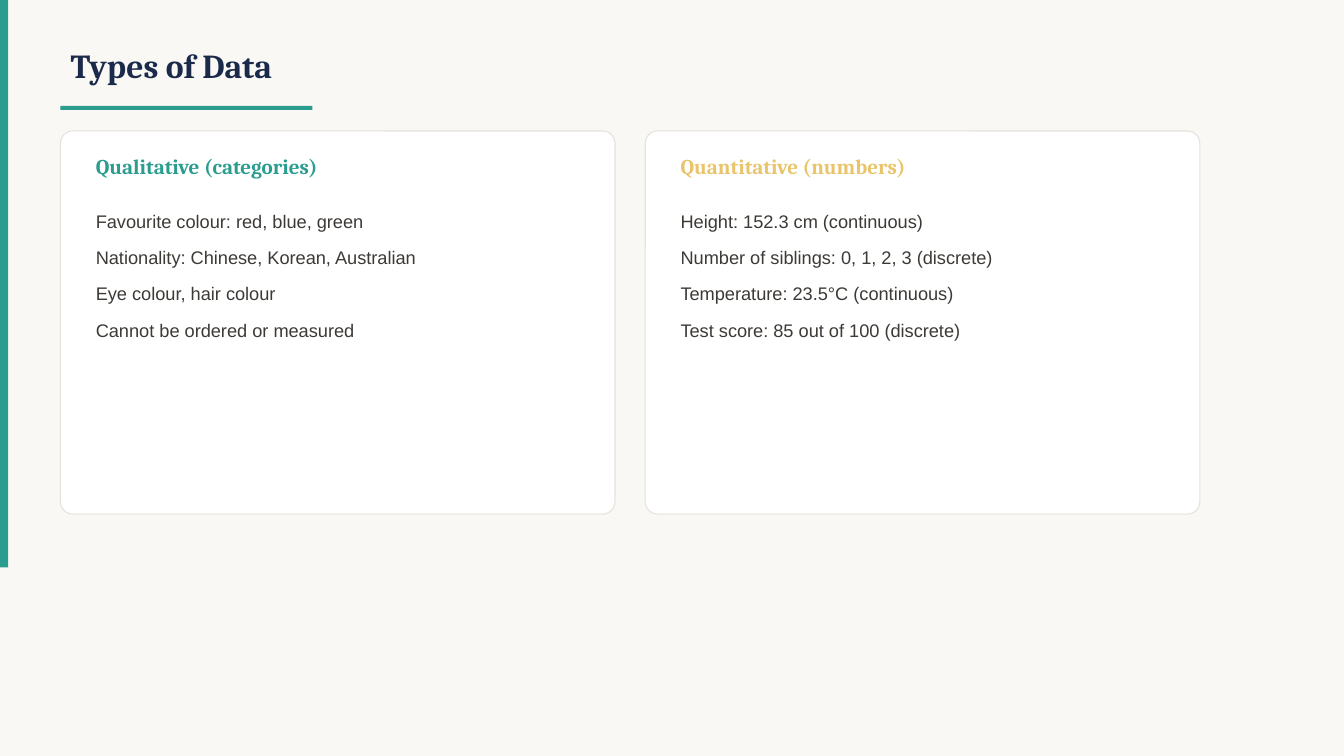
from lxml.etree import SubElement
from pptx import Presentation
from pptx.dml.color import RGBColor
from pptx.enum.shapes import MSO_SHAPE
from pptx.enum.text import MSO_ANCHOR, MSO_AUTO_SIZE, PP_ALIGN
from pptx.oxml.ns import qn
from pptx.util import Inches, Pt

COLORS = {
    "background": "FAF8F5",
    "teal": "2A9D8F",
    "navy": "1B2A4A",
    "gold": "E9C46A",
    "white": "FFFFFF",
    "border": "E5E2DC",
    "text": "3D3A36",
}

CARD_LEFT, CARD_TOP = 0.6, 1.3
CARD_WIDTH, CARD_HEIGHT = 5.5, 3.8
CARD_GAP, CARD_PADDING = 0.3, 0.25

CARDS = [
    ("Qualitative (categories)", "teal", [
        "Favourite colour: red, blue, green",
        "Nationality: Chinese, Korean, Australian",
        "Eye colour, hair colour",
        "Cannot be ordered or measured",
    ]),
    ("Quantitative (numbers)", "gold", [
        "Height: 152.3 cm (continuous)",
        "Number of siblings: 0, 1, 2, 3 (discrete)",
        "Temperature: 23.5°C (continuous)",
        "Test score: 85 out of 100 (discrete)",
    ]),
]


def color(name):
    return RGBColor.from_string(COLORS[name])


def add_block(slide, kind, box, fill, line=None):
    shape = slide.shapes.add_shape(kind, *map(Inches, box))
    shape.shadow.inherit = False
    shape.fill.solid()
    shape.fill.fore_color.rgb = color(fill)
    if line:
        shape.line.color.rgb = color(line)
        shape.line.width = Pt(0.75)
    else:
        shape.line.fill.background()
    return shape


def place(slide, placeholder, box, anchor):
    placeholder.left, placeholder.top, placeholder.width, placeholder.height = map(Inches, box)
    slide.shapes.element.append(placeholder.element)
    frame = placeholder.text_frame
    frame.word_wrap = True
    frame.auto_size = MSO_AUTO_SIZE.NONE
    frame.vertical_anchor = anchor
    return frame


def write_paragraph(paragraph, text, font_name, size, color_name, bold=False):
    properties = paragraph._p.get_or_add_pPr()
    properties.set("marL", "0")
    properties.set("indent", "0")
    SubElement(properties, qn("a:buNone"))
    paragraph.alignment = PP_ALIGN.LEFT
    paragraph.space_before = Pt(0)
    run = paragraph.add_run()
    run.text = text
    run.font.name = font_name
    run.font.size = Pt(size)
    run.font.bold = bold
    run.font.color.rgb = color(color_name)


def fill_heading(slide, placeholder, box, text, size, color_name):
    frame = place(slide, placeholder, box, MSO_ANCHOR.MIDDLE)
    write_paragraph(frame.paragraphs[0], text, "Cambria", size, color_name, bold=True)


def fill_list(slide, placeholder, box, items):
    frame = place(slide, placeholder, box, MSO_ANCHOR.TOP)
    for index, item in enumerate(items):
        paragraph = frame.add_paragraph() if index else frame.paragraphs[0]
        write_paragraph(paragraph, item, "Arial", 13, "text")
        paragraph.line_spacing = 1.4
        paragraph.space_after = Pt(4)


def add_card(slide, left, heading_placeholder, list_placeholder, heading, accent, items):
    card = add_block(slide, MSO_SHAPE.ROUNDED_RECTANGLE,
                     (left, CARD_TOP, CARD_WIDTH, CARD_HEIGHT), "white", "border")
    card.adjustments[0] = 0.032
    text_left = left + CARD_PADDING
    text_width = CARD_WIDTH - 2 * CARD_PADDING
    fill_heading(slide, heading_placeholder,
                 (text_left, CARD_TOP + 0.15, text_width, 0.4), heading, 15, accent)
    fill_list(slide, list_placeholder,
              (text_left, CARD_TOP + 0.65, text_width, 2.9), items)


def main():
    presentation = Presentation()
    presentation.slide_width = Inches(13.33)
    presentation.slide_height = Inches(7.5)
    comparison_layout = presentation.slide_layouts.get_by_name("Comparison")
    slide = presentation.slides.add_slide(comparison_layout)
    slide.background.fill.solid()
    slide.background.fill.fore_color.rgb = color("background")

    title, *card_placeholders = list(slide.placeholders)
    add_block(slide, MSO_SHAPE.RECTANGLE, (0, 0, 0.08, 5.63), "teal")
    fill_heading(slide, title, (CARD_LEFT, 0.3, 10, 0.7), "Types of Data", 24, "navy")
    add_block(slide, MSO_SHAPE.RECTANGLE, (CARD_LEFT, 1.05, 2.5, 0.04), "teal")

    for index, (heading, accent, items) in enumerate(CARDS):
        left = CARD_LEFT + index * (CARD_WIDTH + CARD_GAP)
        heading_placeholder, list_placeholder = card_placeholders[2 * index:2 * index + 2]
        add_card(slide, left, heading_placeholder, list_placeholder, heading, accent, items)

    presentation.save("out.pptx")


if __name__ == "__main__":
    main()
